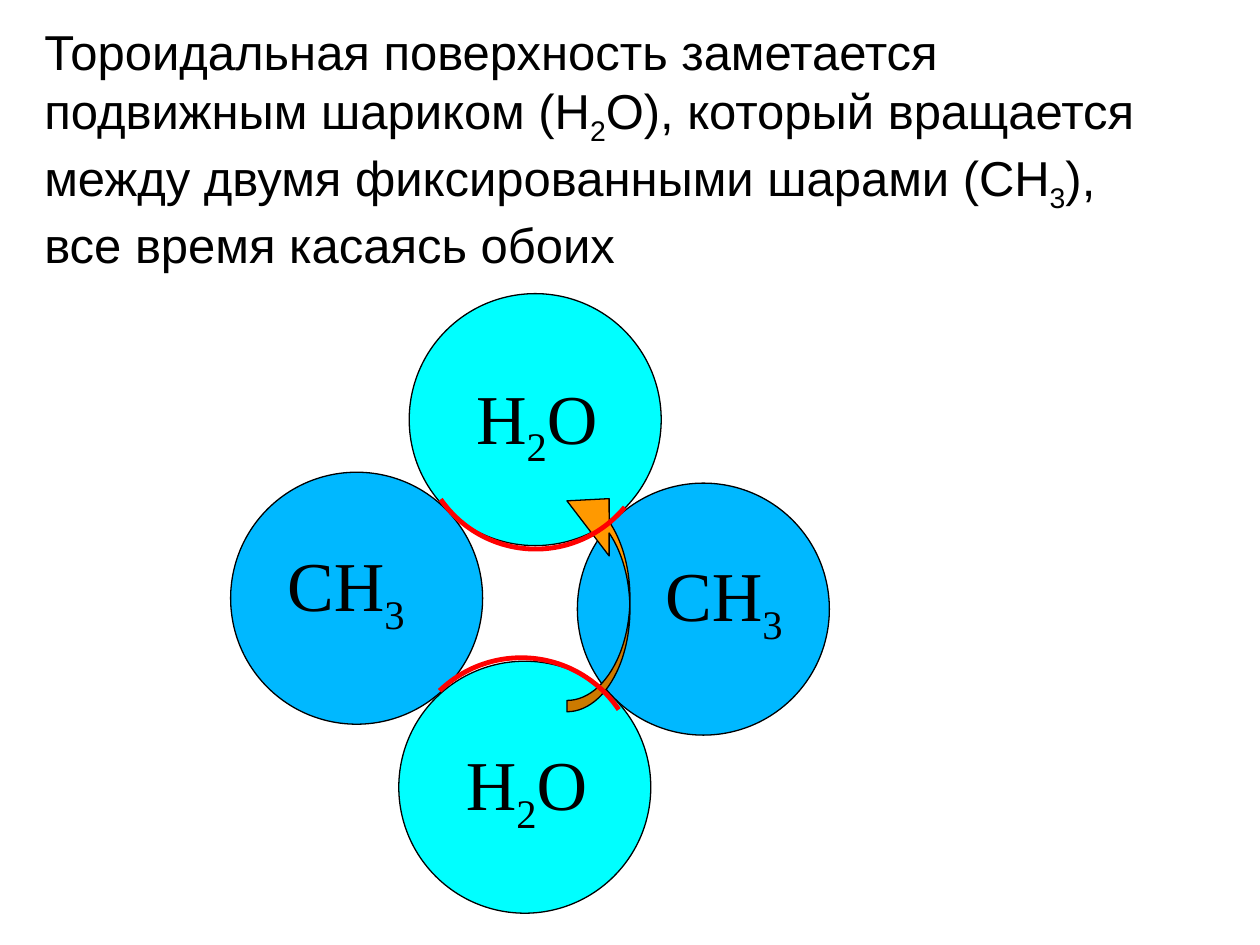
import pptx
import pptx.util
import pptx.dml.color
import pptx.enum.shapes
import pptx.enum.text
import pptx.oxml.ns

Cm = pptx.util.Cm
Pt = pptx.util.Pt
RGBColor = pptx.dml.color.RGBColor
MSO_SHAPE = pptx.enum.shapes.MSO_SHAPE

BLACK = RGBColor(0x00, 0x00, 0x00)
BLUE = RGBColor(0x00, 0xB8, 0xFF)
CYAN = RGBColor(0x00, 0xFF, 0xFF)
ORANGE = RGBColor(0xFF, 0x99, 0x00)
RED = RGBColor(0xFF, 0x00, 0x00)


def write_formula_text(frame, parts, font_name, size):
    paragraph = frame.paragraphs[0]
    paragraph.alignment = pptx.enum.text.PP_ALIGN.LEFT
    for part in parts:
        run = paragraph.add_run()
        run.text = part
        run.font.name = font_name
        run.font.size = Pt(size)
        run.font.color.rgb = BLACK
        if part.isdigit():
            run._r.get_or_add_rPr().set("baseline", "-25000")


def add_figure(kind, left, top, width, height, fill, line, weight):
    figure = slide.shapes.add_shape(kind, Cm(left), Cm(top), Cm(width), Cm(height))
    figure.shadow.inherit = False
    if fill is None:
        figure.fill.background()
    else:
        figure.fill.solid()
        figure.fill.fore_color.rgb = fill
    figure.line.color.rgb = line
    figure.line.width = Pt(weight)
    return figure


presentation = pptx.Presentation()
presentation.slide_width = Cm(25.4)
presentation.slide_height = Cm(19.05)
slide = presentation.slides.add_slide(presentation.slide_layouts[5])

title = slide.shapes.title
title.left, title.top = Cm(0.64), Cm(0.43)
title.width, title.height = Cm(23.5), Cm(5.08)
title.text_frame.word_wrap = True
title.text_frame.auto_size = pptx.enum.text.MSO_AUTO_SIZE.NONE
title.text_frame.vertical_anchor = pptx.enum.text.MSO_ANCHOR.MIDDLE
write_formula_text(
    title.text_frame,
    [
        "Тороидальная поверхность заметается подвижным шариком (H", "2",
        "O), который вращается между двумя фиксированными шарами (CH", "3",
        "), все время касаясь обоих",
    ],
    "Arial", 28,
)

ball_size = 5.08
balls = [(4.65, 9.52, BLUE), (11.64, 9.74, BLUE), (8.04, 13.33, CYAN), (8.25, 5.92, CYAN)]
for left, top, color in balls:
    add_figure(MSO_SHAPE.OVAL, left, top, ball_size, ball_size, color, BLACK, 0.75)

rotation_arrow = add_figure(
    MSO_SHAPE.CURVED_LEFT_ARROW, 11.43, 9.52, 1.27, 4.83, ORANGE, BLACK, 0.75
)
for index, value in enumerate([0.18, 0.91, 0.67]):
    rotation_arrow.adjustments[index] = value
rotation_arrow._element.spPr.find(pptx.oxml.ns.qn("a:xfrm")).set("flipV", "1")

methyl = ["CH", "3"]
water = ["H", "2", "O"]
labels = [
    (5.54, 10.8, 2.87, methyl),
    (13.16, 11, 2.87, methyl),
    (9.35, 7.42, 2.95, water),
    (9.14, 14.81, 2.95, water),
]
for left, top, width, formula in labels:
    label = slide.shapes.add_textbox(Cm(left), Cm(top), Cm(width), Cm(2.18))
    label.text_frame.word_wrap = False
    label.text_frame.auto_size = pptx.enum.text.MSO_AUTO_SIZE.SHAPE_TO_FIT_TEXT
    write_formula_text(label.text_frame, formula, "Times New Roman", 40)

contact_arcs = [(10.8, 8.74, 2.33, 39.6, 145.3), (10.51, 15.63, 2.37, 226, 326)]
for center_x, center_y, radius, start_degrees, end_degrees in contact_arcs:
    contact_arc = add_figure(
        MSO_SHAPE.ARC, center_x - radius, center_y - radius,
        2 * radius, 2 * radius, None, RED, 2.75,
    )
    contact_arc.adjustments[0] = start_degrees * 0.6
    contact_arc.adjustments[1] = end_degrees * 0.6

presentation.save("out.pptx")
